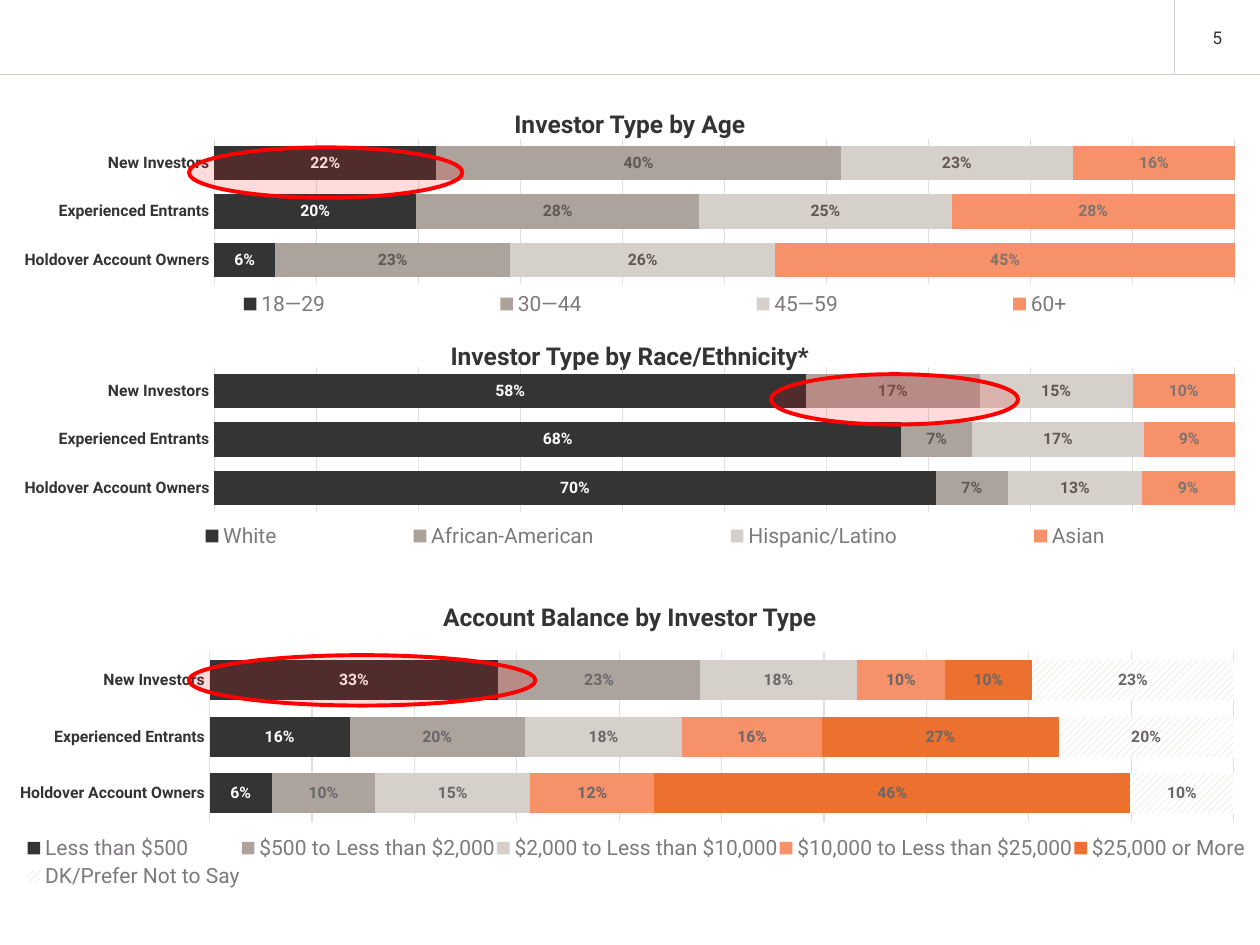
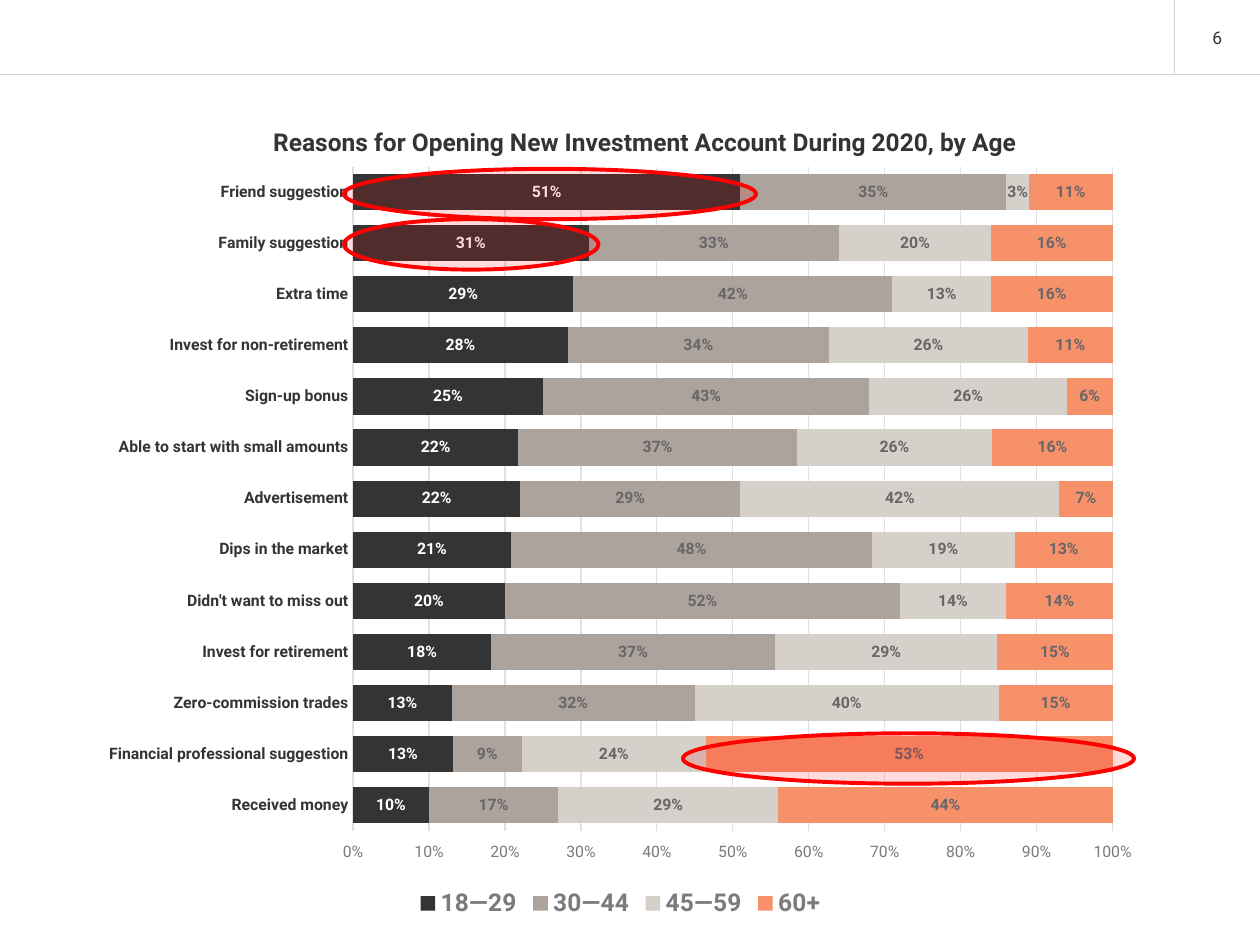
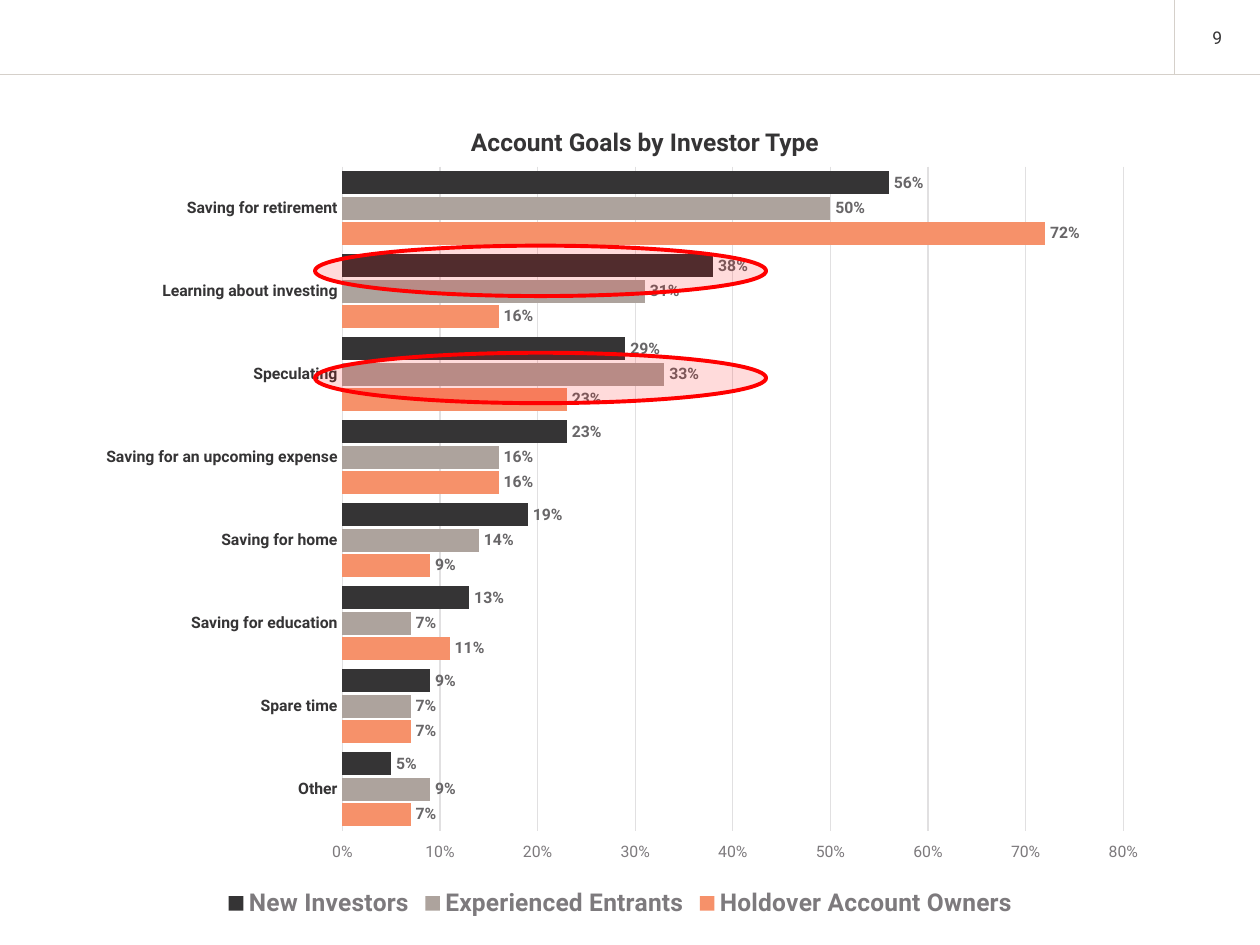
from lxml import etree
from pptx import Presentation
from pptx import util as u
from pptx.chart.data import CategoryChartData
from pptx.dml.color import RGBColor
from pptx.enum import chart as charts, dml, shapes, text
from pptx.oxml import ns

COLUMNS, ROWS = 10, 7.5
FONT = "Roboto"
INK = RGBColor(0x35, 0x34, 0x35)
TAUPE = RGBColor(0xAD, 0xA3, 0x9D)
SAND = RGBColor(0xD5, 0xD0, 0xCA)
CORAL = RGBColor(0xF6, 0x91, 0x6A)
ORANGE = RGBColor(0xEC, 0x71, 0x2E)
WHITE = RGBColor(0xFF, 0xFF, 0xFF)
RED = RGBColor(0xFF, 0x00, 0x00)
GRID = RGBColor(0xE1, 0xE0, 0xE1)
AXIS_GREY = RGBColor(0x7D, 0x7A, 0x7D)
LABEL_GREY = RGBColor(0x68, 0x66, 0x68)
LABEL_BROWN = RGBColor(0x61, 0x57, 0x53)
LABEL_TAUPE = RGBColor(0x7D, 0x74, 0x70)

STACK_FILLS = [INK, TAUPE, SAND, CORAL, ORANGE, None]
BROWN_LABELS = [WHITE, LABEL_BROWN, LABEL_BROWN, LABEL_TAUPE]
GREY_LABELS = [WHITE] + [LABEL_GREY] * 5
STACKED = charts.XL_CHART_TYPE.BAR_STACKED_100
CLUSTERED = charts.XL_CHART_TYPE.BAR_CLUSTERED
HEADER_X, HEADER_Y = 9.32, 0.59
HALO_HEIGHT = 0.4
FULL_CHART = (0.68, 1.2, 8.49, 6.13)

INVESTORS = ["Holdover Account Owners", "Experienced Entrants", "New Investors"]
AGE = {
    "18—29": [6, 20, 22],
    "30—44": [23, 28, 40],
    "45—59": [26, 25, 23],
    "60+": [45, 28, 16],
}
RACE = {
    "White": [70, 68, 58],
    "African-American": [7, 7, 17],
    "Hispanic/Latino": [13, 17, 15],
    "Asian": [9, 9, 10],
}
BALANCE = {
    "Less than $500": [6, 16, 33],
    "$500 to Less than $2,000": [10, 20, 23],
    "$2,000 to Less than $10,000": [15, 18, 18],
    "$10,000 to Less than $25,000": [12, 16, 10],
    "$25,000 or More": [46, 27, 10],
    "DK/Prefer Not to Say": [10, 20, 23],
}
REASONS = [
    "Received money", "Financial professional suggestion", "Zero-commission trades",
    "Invest for retirement", "Didn't want to miss out", "Dips in the market",
    "Advertisement", "Able to start with small amounts", "Sign-up bonus",
    "Invest for non-retirement", "Extra time", "Family suggestion", "Friend suggestion",
]
REASONS_BY_AGE = {
    "18—29": [10, 13, 13, 18, 20, 21, 22, 22, 25, 28, 29, 31, 51],
    "30—44": [17, 9, 32, 37, 52, 48, 29, 37, 43, 34, 42, 33, 35],
    "45—59": [29, 24, 40, 29, 14, 19, 42, 26, 26, 26, 13, 20, 3],
    "60+": [44, 53, 15, 15, 14, 13, 7, 16, 6, 11, 16, 16, 11],
}
GOALS = [
    "Other", "Spare time", "Saving for education", "Saving for home",
    "Saving for an upcoming expense", "Speculating", "Learning about investing",
    "Saving for retirement",
]
GOALS_BY_INVESTOR = {
    "Holdover Account Owners": [7, 7, 11, 9, 16, 23, 16, 72],
    "Experienced Entrants": [9, 7, 7, 14, 16, 33, 31, 50],
    "New Investors": [5, 9, 13, 19, 23, 29, 38, 56],
}


def cells(*lengths):
    return [u.Inches(length) for length in lengths]


def style_font(font, size, color, bold=False):
    font.name = FONT
    font.size = u.Pt(size)
    font.bold = bold
    font.color.rgb = color


def add_text(slide, box, words, size, bold=False, anchor=text.MSO_ANCHOR.TOP):
    frame = slide.shapes.add_textbox(*cells(*box)).text_frame
    frame.word_wrap = True
    frame.vertical_anchor = anchor
    paragraph = frame.paragraphs[0]
    paragraph.text = words
    paragraph.alignment = text.PP_ALIGN.CENTER
    style_font(paragraph.font, size, INK, bold)


def add_title(slide, left, top, words):
    add_text(slide, (left, top, 6.66, 0.34), words, 14, bold=True)


def add_rule(slide, *ends):
    rule = slide.shapes.add_connector(shapes.MSO_CONNECTOR.STRAIGHT, *cells(*ends))
    rule.line.color.rgb = SAND
    rule.line.width = u.Pt(0.65)
    etree.SubElement(rule._element.spPr, ns.qn("a:effectLst"))


def add_page(presentation, number):
    slide = presentation.slides.add_slide(presentation.slide_layouts[6])
    add_rule(slide, HEADER_X, 0, HEADER_X, HEADER_Y)
    add_rule(slide, 0, HEADER_Y, COLUMNS, HEADER_Y)
    add_text(slide, (HEADER_X, 0, COLUMNS - HEADER_X, HEADER_Y), str(number), 10,
             anchor=text.MSO_ANCHOR.MIDDLE)
    return slide


def add_halo(slide, left, top, width):
    halo = slide.shapes.add_shape(shapes.MSO_SHAPE.OVAL, *cells(left, top, width, HALO_HEIGHT))
    halo.shadow.inherit = False
    halo.fill.solid()
    halo.fill.fore_color.rgb = RED
    color = halo._element.spPr.find(".//" + ns.qn("a:srgbClr"))
    etree.SubElement(color, ns.qn("a:alpha"), val="14000")
    halo.line.color.rgb = RED
    halo.line.width = u.Pt(2.25)


def set_layout(element, index, shares, inner=False):
    for old in element.findall(ns.qn("c:layout")):
        element.remove(old)
    layout = etree.Element(ns.qn("c:layout"))
    manual = etree.SubElement(layout, ns.qn("c:manualLayout"))
    settings = [("layoutTarget", "inner")] if inner else []
    settings += [("xMode", "edge"), ("yMode", "edge")]
    settings += zip("xywh", map(str, shares))
    for name, value in settings:
        etree.SubElement(manual, ns.qn("c:" + name), val=value)
    element.insert(index, layout)


def style_line(line, color):
    line.color.rgb = color
    line.width = u.Pt(0.75)


def style_axes(chart, maximum, show_values):
    category_axis, value_axis = chart.category_axis, chart.value_axis
    category_axis.major_tick_mark = charts.XL_TICK_MARK.NONE
    style_font(category_axis.tick_labels.font, 9, INK, True)
    style_line(category_axis.format.line, GRID)
    value_axis.minimum_scale, value_axis.maximum_scale = 0, maximum
    value_axis.major_unit = 0.1
    value_axis.has_major_gridlines = True
    style_line(value_axis.major_gridlines.format.line, GRID)
    value_axis.format.line.fill.background()
    value_axis.tick_labels.number_format = "0%"
    value_axis.tick_labels.number_format_is_linked = False
    style_font(value_axis.tick_labels.font, 9, AXIS_GREY)
    value_axis.visible = show_values


def style_series(series, fill_color, label_color, position):
    fill = series.format.fill
    if fill_color is None:
        fill.patterned()
        fill.pattern = dml.MSO_PATTERN.WIDE_UPWARD_DIAGONAL
        fill.fore_color.rgb = SAND
        fill.back_color.rgb = WHITE
    else:
        fill.solid()
        fill.fore_color.rgb = fill_color
    series.invert_if_negative = False
    labels = series.data_labels
    labels.show_value = True
    labels.number_format = "0%"
    labels.number_format_is_linked = False
    labels.position = position
    style_font(labels.font, 9, label_color, True)


def add_bars(slide, box, categories, percents, plot_shares, label_colors,
             legend_shares=None, kind=STACKED, fills=STACK_FILLS, maximum=1):
    data = CategoryChartData(number_format="0%")
    data.categories = categories
    for name, values in percents.items():
        data.add_series(name, [value / 100 for value in values])
    chart = slide.shapes.add_chart(kind, *cells(*box), data).chart
    style_font(chart.font, 10, INK)
    chart.has_title = False
    chart.has_legend = True
    legend = chart.legend
    legend.position = charts.XL_LEGEND_POSITION.BOTTOM
    legend.include_in_layout = False
    full_page = legend_shares is None
    style_font(legend.font, 14 if full_page else 12, AXIS_GREY, full_page)
    if legend_shares:
        set_layout(legend._element, 1, legend_shares)
    set_layout(chart._chartSpace.chart.plotArea, 0, plot_shares, inner=True)
    style_axes(chart, maximum, full_page)
    plot = chart.plots[0]
    plot.vary_by_categories = False
    plot.gap_width = 41
    plot.overlap = 100 if kind == STACKED else -10
    places = charts.XL_LABEL_POSITION
    position = places.CENTER if kind == STACKED else places.OUTSIDE_END
    for series, fill_color, label_color in zip(plot.series, fills, label_colors):
        style_series(series, fill_color, label_color, position)


def build_investor_types(presentation):
    slide = add_page(presentation, 5)
    for top, words in [(0.82, "Investor Type by Age"),
                       (2.66, "Investor Type by Race/Ethnicity*"),
                       (4.73, "Account Balance by Investor Type")]:
        add_title(slide, 1.67, top, words)
    for top, percents, legend_top in [(1.07, AGE, 0.77), (2.88, RACE, 0.79)]:
        add_bars(slide, (0, top, COLUMNS, 1.58), INVESTORS, percents,
                 (0.17, 0.02, 0.81, 0.73), BROWN_LABELS, (0.06, legend_top, 0.92, 0.16))
    add_bars(slide, (-0.42, 4.96, 10.42, 2.14), INVESTORS, BALANCE,
             (0.2, 0.1, 0.78, 0.63), GREY_LABELS, (0.06, 0.77, 0.93, 0.22))
    for halo in [(1.5, 1.17, 2.17), (6.12, 2.97, 1.96), (1.5, 5.2, 2.75)]:
        add_halo(slide, *halo)


def build_reasons(presentation):
    slide = add_page(presentation, 6)
    add_bars(slide, FULL_CHART, REASONS, REASONS_BY_AGE, (0.25, 0.02, 0.71, 0.86), GREY_LABELS)
    add_title(slide, 1.79, 0.96, "Reasons for Opening New Investment Account During 2020, by Age")
    for halo in [(2.73, 1.34, 3.27), (2.73, 1.74, 2.02), (5.42, 5.82, 3.58)]:
        add_halo(slide, *halo)


def build_goals(presentation):
    slide = add_page(presentation, 9)
    add_bars(slide, FULL_CHART, GOALS, GOALS_BY_INVESTOR, (0.24, 0.02, 0.73, 0.86),
             [LABEL_GREY] * 3, kind=CLUSTERED, fills=[CORAL, TAUPE, INK], maximum=0.8)
    add_title(slide, 1.79, 0.96, "Account Goals by Investor Type")
    for top in (1.95, 2.8):
        add_halo(slide, 2.5, top, 3.58)


def main():
    presentation = Presentation()
    presentation.slide_width, presentation.slide_height = cells(COLUMNS, ROWS)
    build_investor_types(presentation)
    build_reasons(presentation)
    build_goals(presentation)
    presentation.save("out.pptx")


if __name__ == "__main__":
    main()
